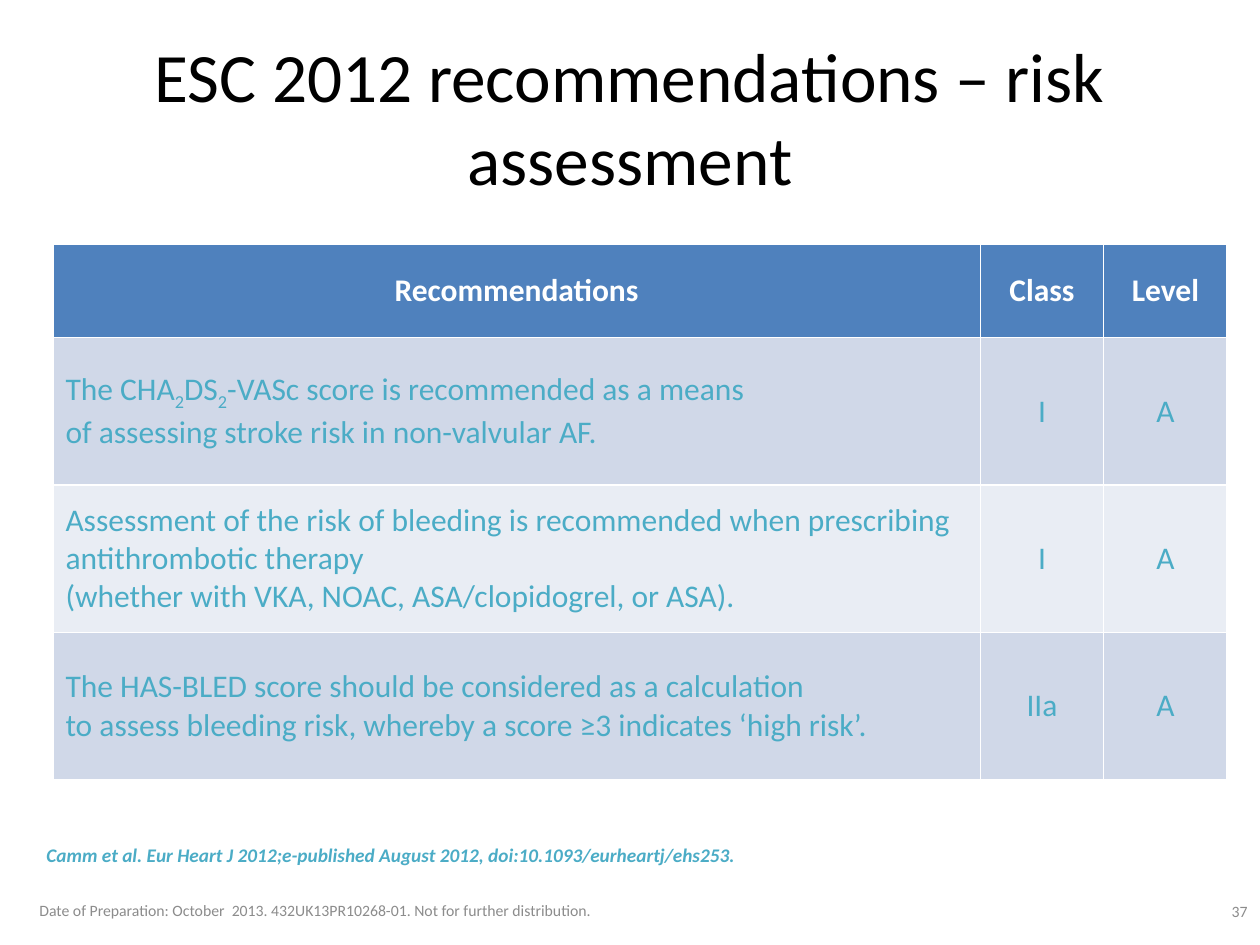
import pptx
import pptx.util
import pptx.dml.color
import pptx.enum.text

Inches = pptx.util.Inches
RGBColor = pptx.dml.color.RGBColor
ALIGN = pptx.enum.text.PP_ALIGN
ANCHOR = pptx.enum.text.MSO_ANCHOR

BLACK = RGBColor(0x00, 0x00, 0x00)
WHITE = RGBColor(0xFF, 0xFF, 0xFF)
GREY = RGBColor(0x8C, 0x8C, 0x8C)
BLUE = RGBColor(0x4F, 0x81, 0xBD)
TEAL = RGBColor(0x4B, 0xAC, 0xC6)
DARK = RGBColor(0xD0, 0xD8, 0xE8)
LIGHT = RGBColor(0xE9, 0xED, 0xF4)


def write(frame, text, size=18, color=TEAL, bold=False, italic=False,
          align=ALIGN.LEFT, space=None):
    """Fill a frame; text between ~ marks is subscript, \n breaks the line."""
    frame.word_wrap = True
    para = frame.paragraphs[0]
    para.alignment = align
    para.line_spacing = space
    for row, line in enumerate(text.split("\n")):
        if row:
            para.add_line_break()
        for part, piece in enumerate(line.split("~")):
            run = para.add_run()
            run.text = piece
            font = run.font
            font.name = "Calibri"
            font.size = pptx.util.Pt(size)
            font.bold, font.italic = bold, italic
            font.color.rgb = color
            if part % 2:
                font._element.set("baseline", "-25000")


def add_text(left, top, width, height, text, anchor=ANCHOR.MIDDLE, **style):
    box = slide.shapes.add_textbox(
        Inches(left), Inches(top), Inches(width), Inches(height))
    box.text_frame.vertical_anchor = anchor
    write(box.text_frame, text, **style)


deck = pptx.Presentation()
deck.slide_width, deck.slide_height = Inches(10), Inches(7.5)
slide = deck.slides.add_slide(deck.slide_layouts[6])

add_text(0.5, 0.3, 9, 1.25, "ESC 2012 recommendations – risk assessment",
         size=39.6, color=BLACK, align=ALIGN.CENTER)
add_text(7.67, 7.11, 2.33, 0.22, "37", anchor=ANCHOR.TOP,
         size=9, color=GREY, align=ALIGN.RIGHT)

rows = [
    ("Recommendations", "Class", "Level"),
    ("The CHA~2~DS~2~-VASc score is recommended as a means\n"
     "of assessing stroke risk in non-valvular AF.", "I", "A"),
    ("Assessment of the risk of bleeding is recommended when prescribing "
     "antithrombotic therapy\n"
     "(whether with VKA, NOAC, ASA/clopidogrel, or ASA).", "I", "A"),
    ("The HAS-BLED score should be considered as a calculation\n"
     "to assess bleeding risk, whereby a score ≥3 indicates ‘high risk’.",
     "IIa", "A"),
]
table = slide.shapes.add_table(
    len(rows), 3, Inches(0.42), Inches(1.94), Inches(9.32), Inches(4.25)).table
for col, width in zip(table.columns, (7.36, 0.98, 0.98)):
    col.width = Inches(width)
for r, row in enumerate(rows):
    head = r == 0
    table.rows[r].height = Inches(0.74 if head else 1.17)
    for c, text in enumerate(row):
        cell = table.cell(r, c)
        cell.vertical_anchor = ANCHOR.MIDDLE
        cell.fill.solid()
        cell.fill.fore_color.rgb = BLUE if head else DARK if r % 2 else LIGHT
        write(cell.text_frame, text, bold=head, color=WHITE if head else TEAL,
              align=ALIGN.CENTER if head or c else ALIGN.LEFT)

add_text(0.27, 6.66, 8.54, 0.27,
         "Camm et al. Eur Heart J 2012;e-published August 2012, "
         "doi:10.1093/eurheartj/ehs253.",
         anchor=ANCHOR.BOTTOM, size=11, bold=True, italic=True, space=0.9)
add_text(0, 7.1, 5, 0.25,
         "Date of Preparation: October  2013. 432UK13PR10268-01. "
         "Not for further distribution.",
         size=9, color=GREY, align=ALIGN.CENTER)

deck.save("out.pptx")
